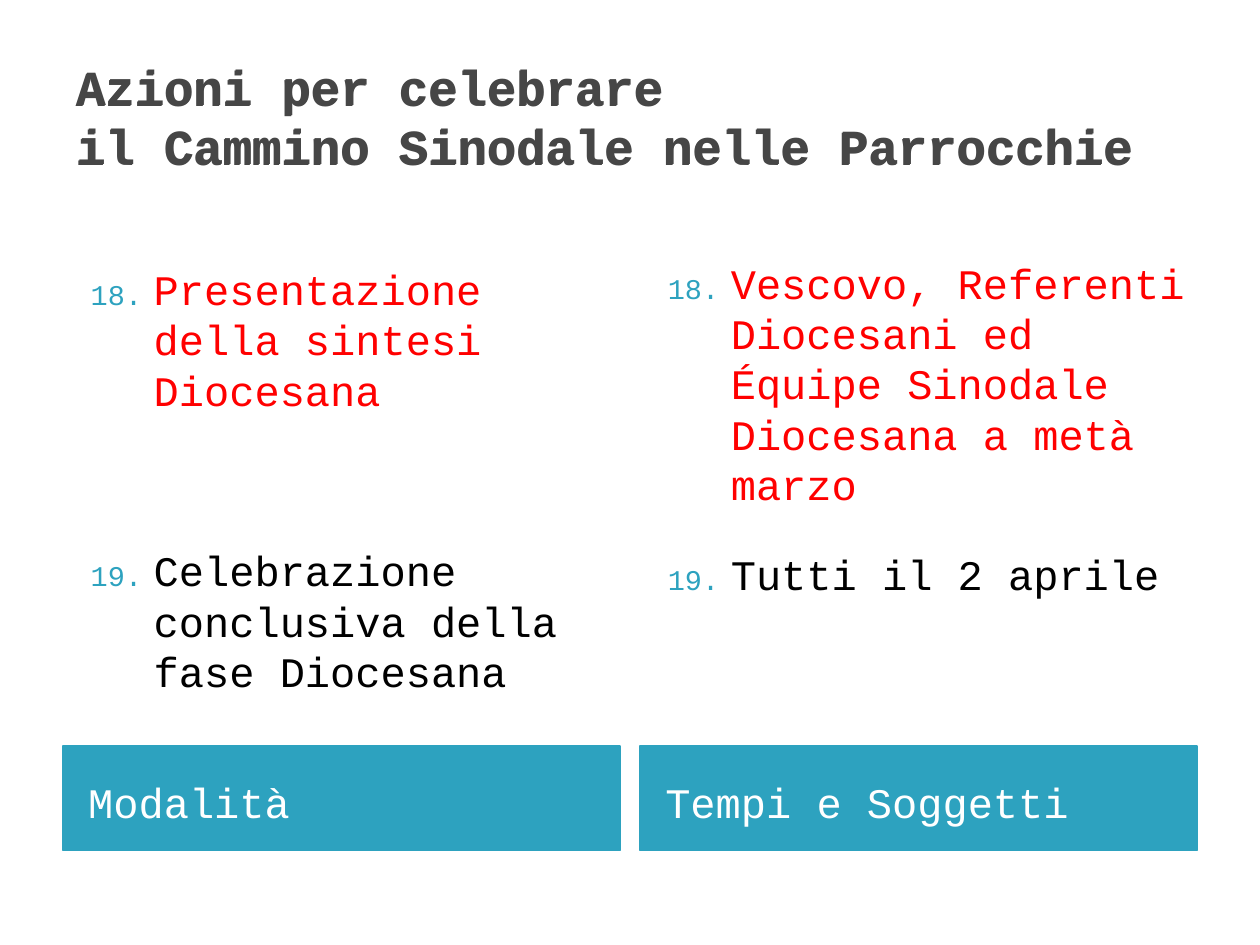
from dataclasses import dataclass

from lxml.etree import SubElement
from pptx import Presentation
from pptx.dml.color import RGBColor
from pptx.enum.text import MSO_ANCHOR, MSO_AUTO_SIZE, PP_ALIGN
from pptx.oxml.ns import qn
from pptx.util import Inches, Pt


@dataclass(frozen=True)
class Theme:
    font: str = "Courier New"
    title_size: int = 28
    body_size: int = 24
    title: str = "464646"
    accent: str = "2DA2BF"
    highlight: str = "FF0000"
    ink: str = "000000"
    paper: str = "FFFFFF"


THEME = Theme()
MARGIN, GAP = 0.5, 0.16
FULL_WIDTH = 10 - 2 * MARGIN
COLUMN_WIDTH = (FULL_WIDTH - GAP) / 2
TITLE_TOP, TITLE_HEIGHT = 0.3, 1.25
LIST_TOP, LIST_HEIGHT = 1.58, 4.31
LABEL_TOP, LABEL_HEIGHT = 5.92, 0.83
SHADOW_SHIFT = 0.01

TITLE_LINES = ["Azioni per celebrare", "il Cammino Sinodale nelle Parrocchie"]
# label, label placeholder, list placeholder, list top inset, gap in points, actions
COLUMNS = [
    ("Modalità", 1, 2, 0.51, 74.5,
     ["Presentazione della sintesi Diocesana",
      "Celebrazione conclusiva della fase Diocesana"]),
    ("Tempi e Soggetti", 3, 4, 0.46, 22.5,
     ["Vescovo, Referenti Diocesani ed Équipe Sinodale Diocesana a metà marzo",
      "Tutti il 2 aprile"]),
]


def place(shape, box):
    shape.left, shape.top, shape.width, shape.height = map(Inches, box)


def prepare_frame(shape, anchor, insets=(0.1, 0.05, 0.1, 0.05)):
    frame = shape.text_frame
    frame.word_wrap = True
    frame.auto_size = MSO_AUTO_SIZE.NONE
    frame.vertical_anchor = anchor
    (frame.margin_left, frame.margin_top,
     frame.margin_right, frame.margin_bottom) = map(Inches, insets)
    return frame


def add_run(paragraph, words, size, color, bold=False):
    run = paragraph.add_run()
    run.text = words
    run.font.name = THEME.font
    run.font.size = Pt(size)
    run.font.bold = bold
    run.font.color.rgb = RGBColor.from_string(color)


def number_from(paragraph, start):
    """Give the paragraph a small coloured number and a hanging indent."""
    properties = paragraph._p.get_or_add_pPr()
    properties.set("marL", str(Inches(0.62)))
    properties.set("indent", str(Inches(-0.5)))
    color = SubElement(properties, qn("a:buClr"))
    SubElement(color, qn("a:srgbClr"), val=THEME.accent)
    SubElement(properties, qn("a:buSzPct"), val="68000")
    SubElement(properties, qn("a:buFont"), typeface=THEME.font)
    SubElement(properties, qn("a:buAutoNum"), type="arabicPeriod", startAt=str(start))


def fill_title(shape, box):
    place(shape, box)
    paragraph = prepare_frame(shape, MSO_ANCHOR.MIDDLE).paragraphs[0]
    paragraph.alignment = PP_ALIGN.LEFT
    for index, line in enumerate(TITLE_LINES):
        if index:
            paragraph.add_line_break()
        add_run(paragraph, line, THEME.title_size, THEME.title, bold=True)


def fill_label(shape, box, label):
    place(shape, box)
    shape.fill.solid()
    shape.fill.fore_color.rgb = RGBColor.from_string(THEME.accent)
    shape.line.color.rgb = RGBColor.from_string(THEME.accent)
    shape.line.width = Pt(0.75)
    frame = prepare_frame(shape, MSO_ANCHOR.MIDDLE, (0.2, 0.1, 0.1, 0.05))
    paragraph = frame.paragraphs[0]
    paragraph.space_before = Pt(0)
    add_run(paragraph, label, THEME.body_size, THEME.paper)


def fill_actions(shape, box, top_inset, gap, actions):
    place(shape, box)
    frame = prepare_frame(shape, MSO_ANCHOR.TOP, (0.1, top_inset, 0.05, 0.05))
    for index, action in enumerate(actions):
        paragraph = frame.add_paragraph() if index else frame.paragraphs[0]
        number_from(paragraph, 18)
        paragraph.space_before = Pt(gap if index else 0)
        color = THEME.ink if index else THEME.highlight
        add_run(paragraph, action, THEME.body_size, color)


def build():
    presentation = Presentation()
    presentation.slide_width, presentation.slide_height = Inches(10), Inches(7.5)
    slide = presentation.slides.add_slide(presentation.slide_layouts[4])
    holders = {holder.placeholder_format.idx: holder for holder in slide.placeholders}

    title_box = (MARGIN, TITLE_TOP, FULL_WIDTH, TITLE_HEIGHT)
    fill_title(slide.shapes.title, title_box)
    for index, (label, label_id, list_id, inset, gap, actions) in enumerate(COLUMNS):
        left = MARGIN + index * (COLUMN_WIDTH + GAP)
        fill_label(holders[label_id], (left, LABEL_TOP, COLUMN_WIDTH, LABEL_HEIGHT), label)
        fill_actions(holders[list_id], (left, LIST_TOP, COLUMN_WIDTH, LIST_HEIGHT),
                     inset, gap, actions)

    front_box = (MARGIN + SHADOW_SHIFT, TITLE_TOP - SHADOW_SHIFT, FULL_WIDTH, TITLE_HEIGHT)
    fill_title(slide.shapes.add_textbox(0, 0, 0, 0), front_box)
    presentation.save("out.pptx")


if __name__ == "__main__":
    build()
